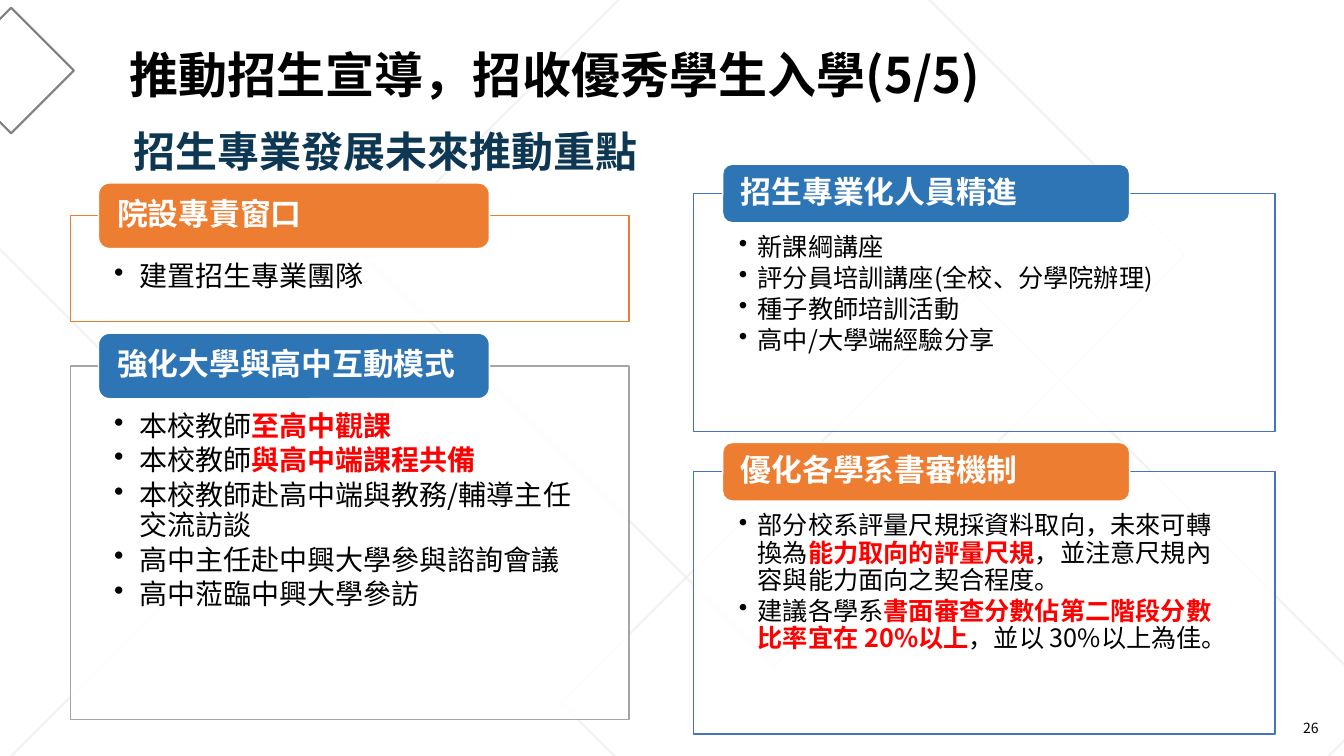
"""Build the slide on admissions promotion priorities."""
import pptx
import pptx.dml.color
import pptx.enum.shapes
import pptx.enum.text
import pptx.oxml
import pptx.oxml.ns
import pptx.util

Pt = pptx.util.Pt
RGBColor = pptx.dml.color.RGBColor
SHAPE = pptx.enum.shapes.MSO_SHAPE
ANCHOR = pptx.enum.text.MSO_ANCHOR
ALIGN = pptx.enum.text.PP_ALIGN
qn = pptx.oxml.ns.qn

FONT = "Noto Sans CJK SC"
BLACK = RGBColor(0x00, 0x00, 0x00)
WHITE = RGBColor(0xFF, 0xFF, 0xFF)
RED = RGBColor(0xFF, 0x00, 0x00)
NAVY = RGBColor(0x0E, 0x37, 0x53)
BLUE = RGBColor(0x2E, 0x75, 0xB6)
LIGHT_BLUE = RGBColor(0x44, 0x72, 0xC4)
ORANGE = RGBColor(0xED, 0x7D, 0x31)
GRAY = RGBColor(0xA5, 0xA5, 0xA5)
DARK_GRAY = RGBColor(0x80, 0x80, 0x80)
PALE_GRAY = RGBColor(0xF2, 0xF2, 0xF2)

DIAMONDS = [
    (-175.7, 213.8, 298.8, PALE_GRAY),
    (345.6, -25.2, 414.7, PALE_GRAY),
    (486.7, 294.5, 414.7, PALE_GRAY),
    (-23.8, 18.7, 63.4, DARK_GRAY),
]

LEFT_COLUMN = {"left": 50.4, "width": 398.9, "tab_height": 46.8, "size": 20, "indent": 18}
RIGHT_COLUMN = {"left": 495.4, "width": 415.4, "tab_height": 41.8, "size": 18, "indent": 13.5}

PANELS = [
    (RIGHT_COLUMN, 138.2, 169.9, LIGHT_BLUE, BLUE, "招生專業化人員精進", [
        [("新課綱講座", False)],
        [("評分員培訓講座(全校、分學院辦理)", False)],
        [("種子教師培訓活動", False)],
        [("高中/大學端經驗分享", False)],
    ]),
    (RIGHT_COLUMN, 337, 187.2, LIGHT_BLUE, ORANGE, "優化各學系書審機制", [
        [("部分校系評量尺規採資料取向，未來可轉換為", False),
         ("能力取向的評量尺規", True),
         ("，並注意尺規內容與能力面向之契合程度。", False)],
        [("建議各學系", False),
         ("書面審查分數佔第二階段分數比率宜在 20%以上", True),
         ("，並以 30%以上為佳。", False)],
    ]),
    (LEFT_COLUMN, 154.1, 75.6, ORANGE, ORANGE, "院設專責窗口", [
        [("建置招生專業團隊", False)],
    ]),
    (LEFT_COLUMN, 261.4, 252.7, GRAY, BLUE, "強化大學與高中互動模式", [
        [("本校教師", False), ("至高中觀課", True)],
        [("本校教師", False), ("與高中端課程共備", True)],
        [("本校教師赴高中端與教務/輔導主任交流訪談", False)],
        [("高中主任赴中興大學參與諮詢會議", False)],
        [("高中蒞臨中興大學參訪", False)],
    ]),
]


def add_run(paragraph, text, size, color, bold=False):
    """Add one run with the same font for Latin and East Asian text."""
    run = paragraph.add_run()
    run.text = text
    run.font.name = FONT
    run.font.size = Pt(size)
    run.font.bold = bold
    run.font.color.rgb = color
    east_asian = pptx.oxml.parse_xml(
        f'<a:ea {pptx.oxml.ns.nsdecls("a")} typeface="{FONT}"/>')
    run.font._element.find(qn("a:latin")).addnext(east_asian)


def add_box(slide, kind, box, line_color, line_width, fill_color=None):
    """Add a preset shape without shadow."""
    shape = slide.shapes.add_shape(kind, *map(Pt, box))
    shape.shadow.inherit = False
    shape.line.color.rgb = line_color
    shape.line.width = Pt(line_width)
    if fill_color is None:
        shape.fill.background()
    else:
        shape.fill.solid()
        shape.fill.fore_color.rgb = fill_color
    return shape


def set_frame(shape, insets, anchor):
    """Set wrapping, insets and anchor, and return the text frame."""
    frame = shape.text_frame
    frame.word_wrap = True
    frame.vertical_anchor = anchor
    (frame.margin_left, frame.margin_top,
     frame.margin_right, frame.margin_bottom) = map(Pt, insets)
    return frame


def add_label(slide, box, text, size, color, bold=True, align=ALIGN.LEFT, spacing=1.0):
    """Add a text box of one paragraph."""
    shape = slide.shapes.add_textbox(*map(Pt, box))
    frame = set_frame(shape, (7.2, 3.6, 7.2, 3.6), ANCHOR.TOP)
    paragraph = frame.paragraphs[0]
    paragraph.alignment = align
    paragraph.line_spacing = spacing
    add_run(paragraph, text, size, color, bold)


def add_diamond(slide, left, top, side, color):
    """Add an outlined square turned by 45 degrees."""
    add_box(slide, SHAPE.RECTANGLE, (left, top, side, side), color, 1.5).rotation = 45


def make_translucent(shape, percent):
    """Set the opacity of a solid fill."""
    color = shape._element.spPr.find(qn("a:solidFill")).find(qn("a:srgbClr"))
    color.append(pptx.oxml.parse_xml(
        f'<a:alpha {pptx.oxml.ns.nsdecls("a")} val="{percent * 1000}"/>'))


def set_bullet(paragraph, indent):
    """Give a paragraph a round bullet with a hanging indent."""
    properties = paragraph._p.get_or_add_pPr()
    properties.set("marL", str(Pt(indent)))
    properties.set("indent", str(-Pt(indent)))
    properties.append(pptx.oxml.parse_xml(
        f'<a:buChar {pptx.oxml.ns.nsdecls("a")} char="•"/>'))


def add_panel(slide, column, top, height, line_color, tab_color, heading, items):
    """Add a framed bullet list with a heading tab centred on its top edge."""
    left, width, size = column["left"], column["width"], column["size"]
    tab_height = column["tab_height"]
    panel = add_box(slide, SHAPE.RECTANGLE, (left, top, width, height), line_color, 1, WHITE)
    make_translucent(panel, 90)
    side = width * 0.078
    frame = set_frame(panel, (side, tab_height * 0.706, side, 10), ANCHOR.TOP)
    for index, item in enumerate(items):
        paragraph = frame.paragraphs[0] if index == 0 else frame.add_paragraph()
        paragraph.alignment = ALIGN.LEFT
        paragraph.line_spacing = 0.9
        paragraph.space_after = Pt(size * 0.15)
        set_bullet(paragraph, column["indent"])
        for text, stressed in item:
            add_run(paragraph, text, size, RED if stressed else BLACK, stressed)

    tab_box = (left + width * 0.05, top - tab_height / 2, width * 0.7, tab_height)
    tab = add_box(slide, SHAPE.ROUNDED_RECTANGLE, tab_box, WHITE, 1, tab_color)
    paragraph = set_frame(tab, (11, 0, 11, 0), ANCHOR.MIDDLE).paragraphs[0]
    paragraph.alignment = ALIGN.LEFT
    paragraph.line_spacing = 0.9
    add_run(paragraph, heading, 22, WHITE, True)


def main():
    """Build and save the presentation."""
    presentation = pptx.Presentation()
    presentation.slide_width = Pt(960)
    presentation.slide_height = Pt(540)
    slide = presentation.slides.add_slide(presentation.slide_layouts[6])
    for diamond in DIAMONDS:
        add_diamond(slide, *diamond)
    add_label(slide, (85.7, 28.1, 647.3, 49.7), "推動招生宣導，招收優秀學生入學(5/5)", 35, BLACK)
    add_label(slide, (88.6, 68.4, 453.6, 61.9), "招生專業發展未來推動重點", 30, NAVY, spacing=1.5)
    for panel in PANELS:
        add_panel(slide, *panel)
    add_label(slide, (733, 510.5, 216, 28.8), "26", 10, BLACK, bold=False, align=ALIGN.RIGHT)
    presentation.save("out.pptx")


if __name__ == "__main__":
    main()
